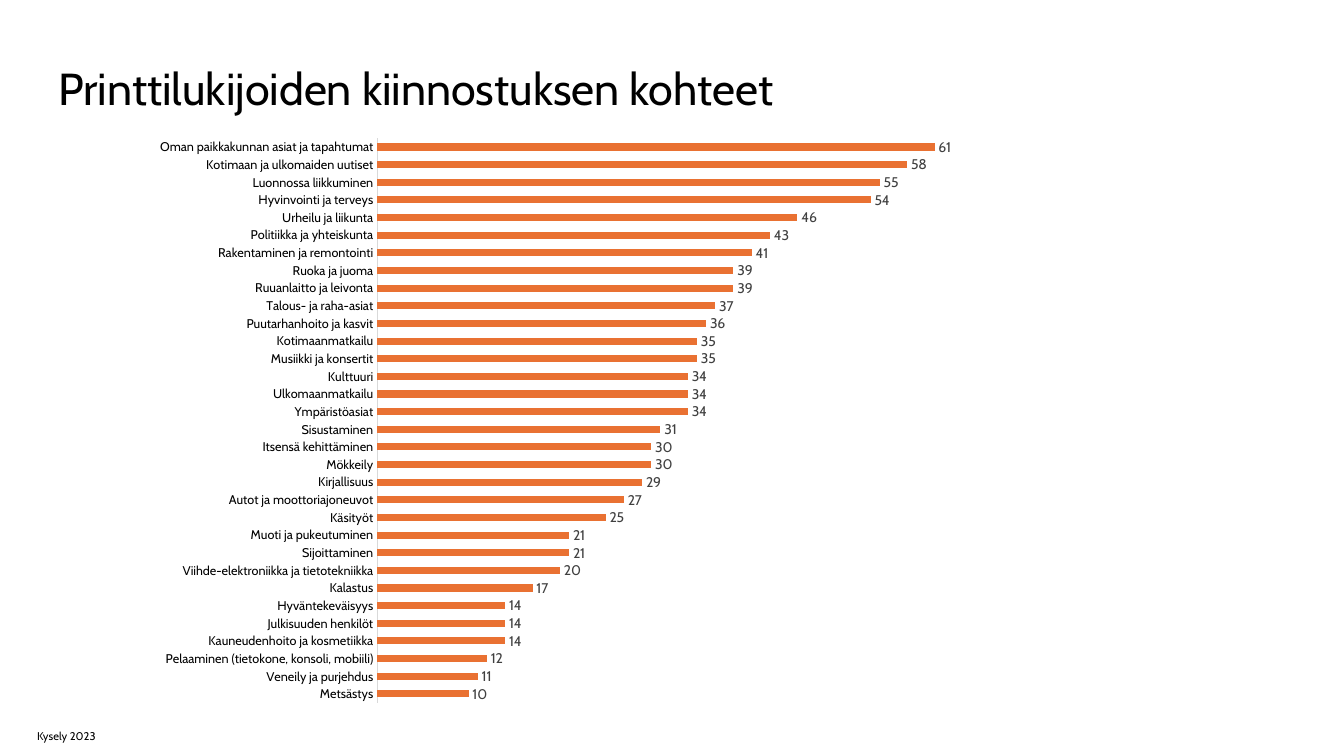
"""Build a slide with a bar chart of the interests of print readers."""
from dataclasses import dataclass

from pptx import Presentation
from pptx.chart.chart import Chart
from pptx.chart.data import CategoryChartData
from pptx.dml.color import RGBColor
from pptx.enum.chart import XL_CHART_TYPE, XL_LABEL_POSITION, XL_TICK_LABEL_POSITION, XL_TICK_MARK
from pptx.enum.text import MSO_ANCHOR
from pptx.oxml import parse_xml
from pptx.oxml.ns import nsdecls, qn
from pptx.slide import Slide
from pptx.text.text import Font
from pptx.util import Inches, Pt

BAR_CLUSTERED = XL_CHART_TYPE.BAR_CLUSTERED
OUTSIDE_END = XL_LABEL_POSITION.OUTSIDE_END
NEXT_TO_AXIS = XL_TICK_LABEL_POSITION.NEXT_TO_AXIS
NO_TICKS = XL_TICK_MARK.NONE
MIDDLE = MSO_ANCHOR.MIDDLE

FONT_NAME = "Cabin"
COLORS = {"text": "000000", "value": "404040", "bar": "E97132", "axis": "D9D9D9"}
PLOT_FRACTIONS = {"x": 0.283, "y": 0.055, "w": 0.672, "h": 0.902}

INTERESTS = {
    "Oman paikkakunnan asiat ja tapahtumat": 61,
    "Kotimaan ja ulkomaiden uutiset": 58,
    "Luonnossa liikkuminen": 55,
    "Hyvinvointi ja terveys": 54,
    "Urheilu ja liikunta": 46,
    "Politiikka ja yhteiskunta": 43,
    "Rakentaminen ja remontointi": 41,
    "Ruoka ja juoma": 39,
    "Ruuanlaitto ja leivonta": 39,
    "Talous- ja raha-asiat": 37,
    "Puutarhanhoito ja kasvit": 36,
    "Kotimaanmatkailu": 35,
    "Musiikki ja konsertit": 35,
    "Kulttuuri": 34,
    "Ulkomaanmatkailu": 34,
    "Ympäristöasiat": 34,
    "Sisustaminen": 31,
    "Itsensä kehittäminen": 30,
    "Mökkeily": 30,
    "Kirjallisuus": 29,
    "Autot ja moottoriajoneuvot": 27,
    "Käsityöt": 25,
    "Muoti ja pukeutuminen": 21,
    "Sijoittaminen": 21,
    "Viihde-elektroniikka ja tietotekniikka": 20,
    "Kalastus": 17,
    "Hyväntekeväisyys": 14,
    "Julkisuuden henkilöt": 14,
    "Kauneudenhoito ja kosmetiikka": 14,
    "Pelaaminen (tietokone, konsoli, mobiili)": 12,
    "Veneily ja purjehdus": 11,
    "Metsästys": 10,
}


@dataclass(frozen=True)
class Caption:
    wording: str
    left: float
    top: float
    width: float
    height: float
    size: float
    line_spacing: float = 1.0


CAPTIONS = (
    Caption("Printtilukijoiden kiinnostuksen kohteet", 0.48, 0.5, 12.36, 0.81, 32, 0.9),
    Caption("Kysely 2023", 0.27, 7.1, 1.05, 0.4, 8),
)


def rgb(role: str) -> RGBColor:
    return RGBColor.from_string(COLORS[role])


def style_font(font: Font, size: float, role: str) -> None:
    font.name = FONT_NAME
    font.size = Pt(size)
    font.color.rgb = rgb(role)


def add_caption(slide: Slide, caption: Caption) -> None:
    frame = slide.shapes.add_textbox(
        Inches(caption.left), Inches(caption.top), Inches(caption.width), Inches(caption.height)
    ).text_frame
    frame.word_wrap = True
    frame.vertical_anchor = MIDDLE
    frame.text = caption.wording
    paragraph = frame.paragraphs[0]
    paragraph.line_spacing = caption.line_spacing
    style_font(paragraph.runs[0].font, caption.size, "text")


def fix_plot_layout(chart: Chart) -> None:
    plot_area = chart.element.find(qn("c:chart")).find(qn("c:plotArea"))
    for automatic_layout in plot_area.findall(qn("c:layout")):
        plot_area.remove(automatic_layout)
    fractions = "".join(f'<c:{side} val="{share}"/>' for side, share in PLOT_FRACTIONS.items())
    plot_area.insert(0, parse_xml(
        f'<c:layout {nsdecls("c")}><c:manualLayout><c:layoutTarget val="inner"/>'
        f'<c:xMode val="edge"/><c:yMode val="edge"/>{fractions}</c:manualLayout></c:layout>'
    ))


def add_interest_chart(slide: Slide) -> None:
    interest_data = CategoryChartData(number_format="0")
    interest_data.categories = list(INTERESTS)
    interest_data.add_series("Series 1", list(INTERESTS.values()))
    chart = slide.shapes.add_chart(
        BAR_CLUSTERED, Inches(1.07), Inches(1.03), Inches(9.44), Inches(6.21), interest_data
    ).chart
    chart.has_title = False
    chart.has_legend = False
    style_font(chart.font, 10, "text")

    topics = chart.category_axis
    topics.reverse_order = True
    topics.major_tick_mark = NO_TICKS
    topics.minor_tick_mark = NO_TICKS
    topics.tick_label_position = NEXT_TO_AXIS
    topics.format.line.color.rgb = rgb("axis")
    topics.format.line.width = Pt(0.75)
    style_font(topics.tick_labels.font, 9, "text")

    shares = chart.value_axis
    shares.minimum_scale = 0
    shares.maximum_scale = 70
    shares.has_major_gridlines = False
    shares.visible = False

    bars = chart.plots[0]
    bars.gap_width = 150
    bars.vary_by_categories = False
    readers = bars.series[0]
    readers.format.fill.solid()
    readers.format.fill.fore_color.rgb = rgb("bar")
    readers.data_labels.show_value = True
    readers.data_labels.position = OUTSIDE_END
    style_font(readers.data_labels.font, 10, "value")
    fix_plot_layout(chart)


def main() -> None:
    presentation = Presentation()
    presentation.slide_width = Inches(13.33)
    presentation.slide_height = Inches(7.5)
    slide = presentation.slides.add_slide(presentation.slide_layouts[6])
    for caption in CAPTIONS:
        add_caption(slide, caption)
    add_interest_chart(slide)
    presentation.save("out.pptx")


if __name__ == "__main__":
    main()
